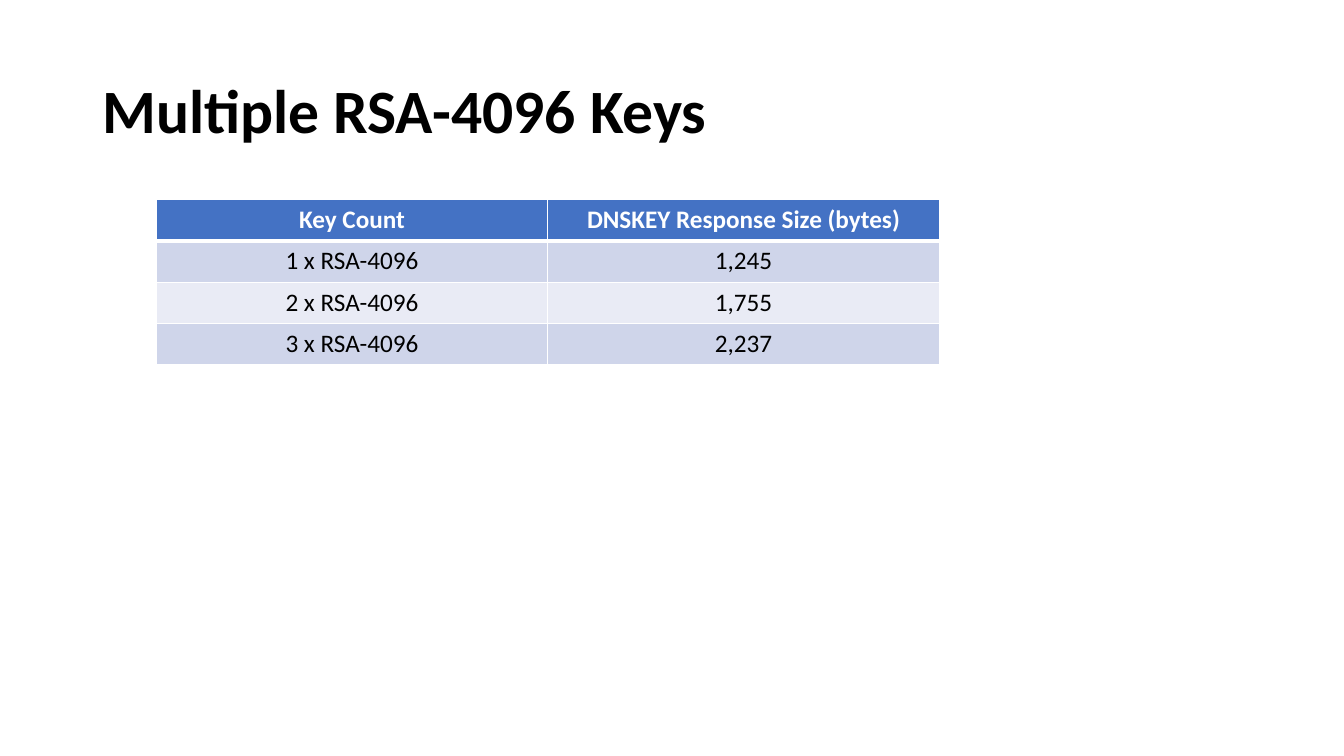
import dataclasses

import lxml.etree
import pptx
import pptx.dml.color
import pptx.enum.text
import pptx.oxml.ns
import pptx.util


@dataclasses.dataclass(frozen=True)
class Theme:
    """Colours, font and type sizes of the deck."""
    font: str = "Calibri"
    ink: str = "000000"
    paper: str = "FFFFFF"
    header: str = "4472C4"
    bands: tuple = ("CFD5EA", "E9EBF5")
    title_size: int = 44
    table_size: int = 18
    thin_rule: int = 1
    thick_rule: int = 3


def write_text(frame, text, *, font, size, color, bold=False,
               align=None, anchor=None, line_spacing=None):
    """Write one formatted paragraph into a text frame."""
    frame.text = text
    frame.word_wrap = True
    if anchor is not None:
        frame.vertical_anchor = anchor
    para = frame.paragraphs[0]
    para.alignment = align
    para.line_spacing = line_spacing
    span = para.runs[0]
    span.font.name = font
    span.font.size = pptx.util.Pt(size)
    span.font.bold = bold
    span.font.color.rgb = pptx.dml.color.RGBColor.from_string(color)


class Page:
    """A slide drawn in a theme on a grid of 160 columns and 90 rows."""

    COLUMNS, ROWS = 160, 90

    def __init__(self, deck, theme):
        """Add a title-only slide to the deck."""
        self.theme = theme
        self.column = deck.slide_width / self.COLUMNS
        self.row = deck.slide_height / self.ROWS
        self.slide = deck.slides.add_slide(deck.slide_layouts[5])

    def area(self, left, top, width, height):
        """Turn grid columns and rows into slide lengths."""
        return [round(length) for length in (
            left * self.column, top * self.row,
            width * self.column, height * self.row)]

    def title(self, text, *area):
        """Place and format the title."""
        box = self.slide.shapes.title
        box.left, box.top, box.width, box.height = self.area(*area)
        write_text(box.text_frame, text, font=self.theme.font,
                   size=self.theme.title_size, color=self.theme.ink, bold=True,
                   align=pptx.enum.text.PP_ALIGN.LEFT, line_spacing=0.9,
                   anchor=pptx.enum.text.MSO_ANCHOR.MIDDLE)

    def border(self, cell, side, points):
        """Draw one side of a cell's border."""
        properties = cell._tc.get_or_add_tcPr()
        line = lxml.etree.SubElement(properties, pptx.oxml.ns.qn(f"a:ln{side}"),
                                     w=str(pptx.util.Pt(points)))
        fill = lxml.etree.SubElement(line, pptx.oxml.ns.qn("a:solidFill"))
        lxml.etree.SubElement(fill, pptx.oxml.ns.qn("a:srgbClr"), val=self.theme.paper)

    def cell(self, cell, text, row):
        """Fill and format a cell according to its row."""
        theme = self.theme
        is_header = row == 0
        rules = dict.fromkeys("LRTB", theme.thin_rule)
        if row < 2:
            rules["B" if is_header else "T"] = theme.thick_rule
        for side, points in rules.items():
            self.border(cell, side, points)
        color = theme.header if is_header else theme.bands[(row - 1) % 2]
        cell.fill.solid()
        cell.fill.fore_color.rgb = pptx.dml.color.RGBColor.from_string(color)
        write_text(cell.text_frame, text, font=theme.font, size=theme.table_size,
                   color=theme.paper if is_header else theme.ink, bold=is_header,
                   align=pptx.enum.text.PP_ALIGN.CENTER)

    def table(self, rows, *area):
        """Add a banded table with equal columns and rows."""
        table = self.slide.shapes.add_table(
            len(rows), len(rows[0]), *self.area(*area)).table
        for row, texts in enumerate(rows):
            for column, text in enumerate(texts):
                self.cell(table.cell(row, column), text, row)


def main():
    """Build and save the deck."""
    deck = pptx.Presentation()
    deck.slide_width = pptx.util.Inches(40 / 3)
    deck.slide_height = pptx.util.Inches(7.5)
    page = Page(deck, Theme())
    page.title("Multiple RSA-4096 Keys", 11, 4.8, 138, 17.4)
    sizes = ("1,245", "1,755", "2,237")
    rows = [("Key Count", "DNSKEY Response Size (bytes)")]
    rows += [(f"{count} x RSA-4096", size) for count, size in enumerate(sizes, 1)]
    page.table(rows, 18.6, 23.76, 93.24, 19.68)
    deck.save("out.pptx")


if __name__ == "__main__":
    main()
